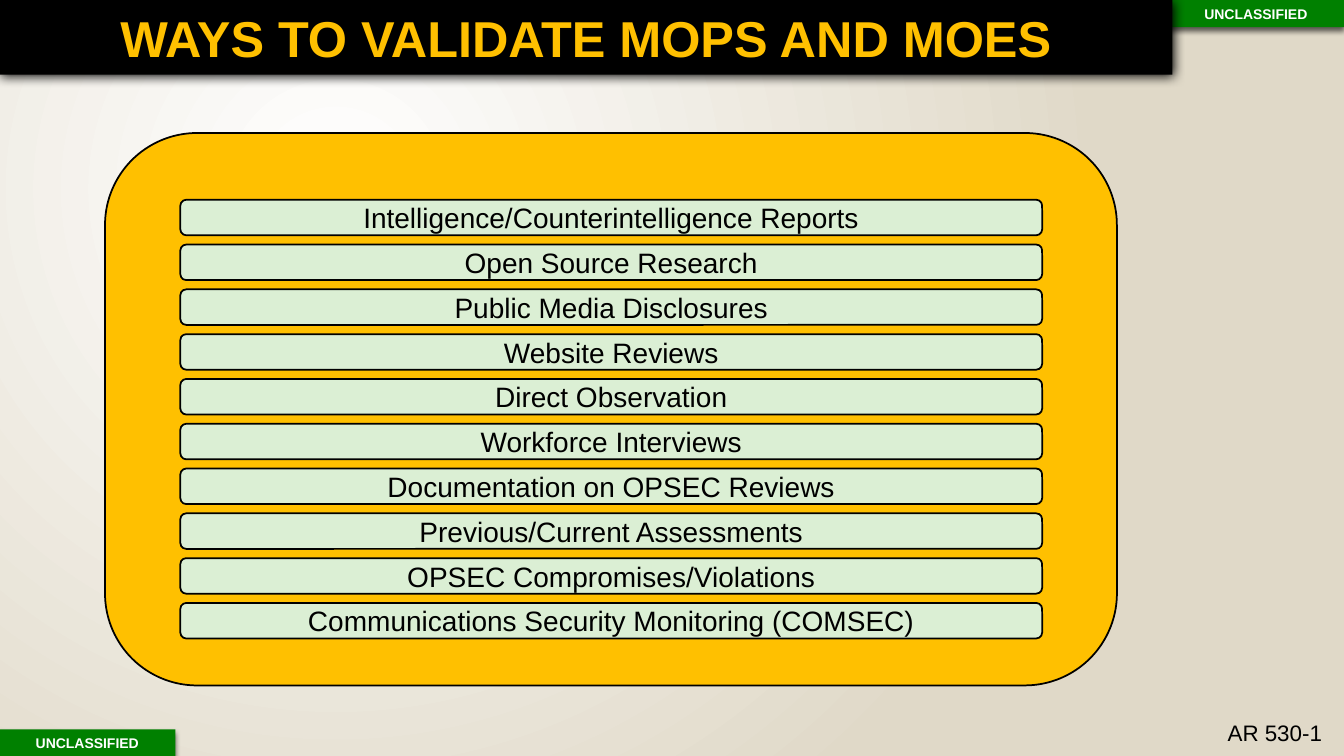
from dataclasses import dataclass

from pptx import Presentation
from pptx.dml.color import RGBColor
from pptx.enum.shapes import MSO_SHAPE as Preset
from pptx.enum.text import MSO_ANCHOR as Anchor, MSO_AUTO_SIZE as AutoSize, PP_ALIGN as Align
from pptx.oxml import parse_xml
from pptx.oxml.ns import nsdecls
from pptx.util import Pt

TITLE = "WAYS TO VALIDATE MOPS AND MOES"
METHODS = [
    "Intelligence/Counterintelligence Reports",
    "Open Source Research",
    "Public Media Disclosures",
    "Website Reviews",
    "Direct Observation",
    "Workforce Interviews",
    "Documentation on OPSEC Reviews",
    "Previous/Current Assessments",
    "OPSEC Compromises/Violations",
    "Communications Security Monitoring (COMSEC)",
]
MARKING = "UNCLASSIFIED"
REFERENCE = "AR 530-1"


@dataclass(frozen=True)
class Theme:
    font: str = "Arial"
    black: str = "000000"
    white: str = "FFFFFF"
    sand: str = "E0D9C8"
    gold: str = "FFC000"
    mint: str = "DBEFD4"
    green: str = "008000"
    title_size: int = 36
    method_size: int = 20
    reference_size: int = 16
    marking_size: int = 10
    outline: float = 1.25


THEME = Theme()
SLIDE_W, SLIDE_H = 960, 540
TITLE_BOX = (0, 0, 837.4, 53.4)
MARKING_BOXES = [(-0.7, 521, 126, 19.4), (834, 0, 126, 19.4)]
PANEL_BOX = (75, 95, 722.8, 394.6)
REFERENCE_BOX = (869.8, 509.8, 90, 30.2)
METHOD_LEFT, METHOD_TOP, METHOD_W, METHOD_H = 128.8, 142.7, 615.6, 25.4
METHOD_PITCH = 32


def rgb(colour):
    return RGBColor.from_string(colour)


def write(part, wording, size, colour, bold=False, align=Align.CENTER, anchor=Anchor.MIDDLE):
    frame = part.text_frame
    frame.text = wording
    frame.word_wrap = True
    frame.auto_size = AutoSize.NONE
    frame.vertical_anchor = anchor
    paragraph = frame.paragraphs[0]
    paragraph.alignment = align
    font = paragraph.font
    font.name, font.size, font.bold = THEME.font, Pt(size), bold
    font.color.rgb = rgb(colour)


def paint(part, colour, outlined=False):
    part.fill.solid()
    part.fill.fore_color.rgb = rgb(colour)
    if outlined:
        part.line.color.rgb = rgb(THEME.black)
        part.line.width = Pt(THEME.outline)
    else:
        part.line.fill.background()


def add_block(shapes, preset, box, colour, outlined=False):
    block = shapes.add_shape(preset, *map(Pt, box))
    block.shadow.inherit = False
    paint(block, colour, outlined)
    return block


def drop_shadow(part, opacity, blur, distance):
    part.shadow.inherit = False
    effects = part._element.spPr.find("{*}effectLst")
    effects.append(parse_xml(
        f'<a:outerShdw {nsdecls("a")} blurRad="{Pt(blur)}" dist="{Pt(distance)}" '
        f'dir="5400000" algn="ctr" rotWithShape="0"><a:srgbClr val="{THEME.black}">'
        f'<a:alpha val="{opacity * 1000}"/></a:srgbClr></a:outerShdw>'))


def paint_background(slide):
    fill = slide.background.fill
    fill.gradient()
    for stop, colour in zip(fill.gradient_stops, (THEME.white, THEME.sand)):
        stop.color.rgb = rgb(colour)
    linear = slide._element.find(".//{*}bgPr/{*}gradFill/{*}lin")
    linear.getparent().replace(linear, parse_xml(
        f'<a:path {nsdecls("a")} path="circle">'
        '<a:fillToRect l="50000" t="50000" r="100000" b="100000"/></a:path>'))


def add_title(slide):
    title = slide.shapes.title
    title.left, title.top, title.width, title.height = map(Pt, TITLE_BOX)
    paint(title, THEME.black)
    drop_shadow(title, 100, 8.5, 1)
    write(title, TITLE, THEME.title_size, THEME.gold, bold=True)
    slide.shapes._spTree.append(title._element)


def add_markings(slide):
    for box in MARKING_BOXES:
        marking = add_block(slide.shapes, Preset.RECTANGLE, box, THEME.green)
        drop_shadow(marking, 60, 4, 3)
        write(marking, MARKING, THEME.marking_size, THEME.white, bold=True)


def add_methods(slide):
    panel = slide.shapes.add_group_shape().shapes
    add_block(panel, Preset.ROUNDED_RECTANGLE, PANEL_BOX, THEME.gold, outlined=True)
    for index, wording in enumerate(METHODS):
        box = (METHOD_LEFT, METHOD_TOP + index * METHOD_PITCH, METHOD_W, METHOD_H)
        method = add_block(panel, Preset.ROUNDED_RECTANGLE, box, THEME.mint, outlined=True)
        write(method, wording, THEME.method_size, THEME.black)


def add_reference(slide):
    reference = slide.shapes.add_textbox(*map(Pt, REFERENCE_BOX))
    write(reference, REFERENCE, THEME.reference_size, THEME.black,
          align=Align.LEFT, anchor=Anchor.TOP)


def main():
    deck = Presentation()
    deck.slide_width, deck.slide_height = Pt(SLIDE_W), Pt(SLIDE_H)
    slide = deck.slides.add_slide(deck.slide_layouts.get_by_name("Title Only"))
    paint_background(slide)
    add_markings(slide)
    add_title(slide)
    add_methods(slide)
    add_reference(slide)
    deck.save("out.pptx")


if __name__ == "__main__":
    main()
